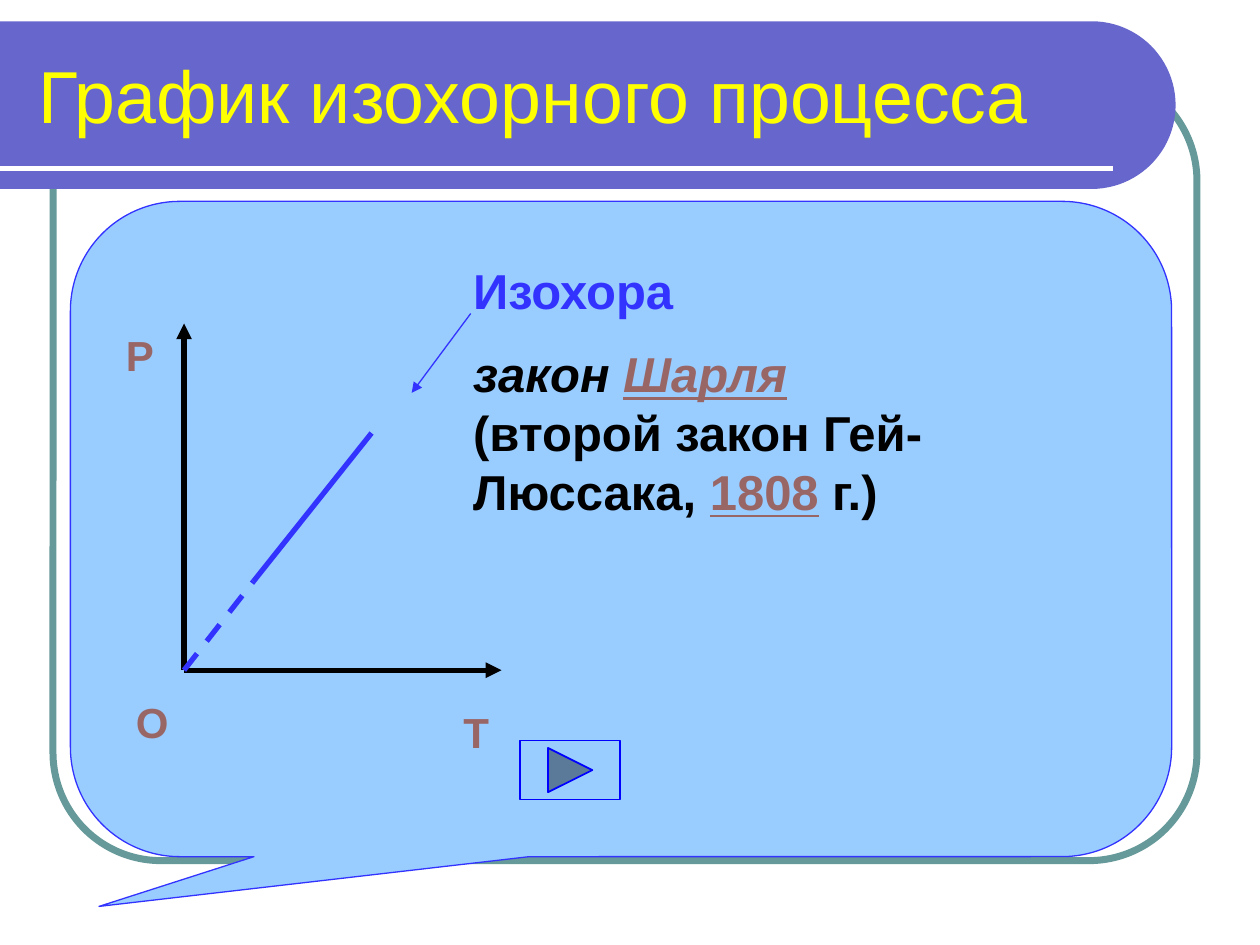
import math

import pptx
import pptx.dml.color
import pptx.enum.dml
import pptx.enum.shapes
import pptx.enum.text
import pptx.oxml
import pptx.oxml.ns
import pptx.util

Cm = pptx.util.Cm
Pt = pptx.util.Pt
SHAPES = pptx.enum.shapes.MSO_SHAPE

COLORS = {
    "banner": "6666CC", "frame": "669999", "white": "FFFFFF", "title": "FFFF00",
    "callout": "99CCFF", "isochore": "3333FF", "axis": "000000",
    "accent": "996666", "button": "0000FF",
}
LABEL = {"size": Pt(24), "bold": True}
LAW = {"size": Pt(28), "bold": True}


def rgb(name):
    return pptx.dml.color.RGBColor.from_string(COLORS[name])


def style_shape(shape, fill=None, line=None, width=0.75):
    shape.shadow.inherit = False
    if fill:
        shape.fill.solid()
        shape.fill.fore_color.rgb = rgb(fill)
    else:
        shape.fill.background()
    if line:
        shape.line.color.rgb = rgb(line)
        shape.line.width = Pt(width)
    else:
        shape.line.fill.background()


def add_preset(slide, preset, box, adjustments=(), **style):
    shape = slide.shapes.add_shape(preset, *map(Cm, box))
    for index, value in enumerate(adjustments):
        shape.adjustments[index] = value
    style_shape(shape, **style)
    return shape


def add_line(slide, start, end, color, width=3, arrow=False, dashed=False):
    connector = slide.shapes.add_connector(
        pptx.enum.shapes.MSO_CONNECTOR.STRAIGHT, *map(Cm, start + end))
    connector.line.color.rgb = rgb(color)
    connector.line.width = Pt(width)
    if dashed:
        connector.line.dash_style = pptx.enum.dml.MSO_LINE.DASH
    if arrow:
        line = connector.line._get_or_add_ln()
        tail = pptx.oxml.parse_xml(
            f'<a:tailEnd {pptx.oxml.ns.nsdecls("a")} type="triangle"/>')
        line.append(tail)
    connector._element.spPr.append(
        pptx.oxml.parse_xml(f'<a:effectLst {pptx.oxml.ns.nsdecls("a")}/>'))


def add_text(slide, box, paragraphs, base, space_before=0, anchor="TOP"):
    """Each paragraph is a list of (text, color, extra font values)."""
    frame = slide.shapes.add_textbox(*map(Cm, box)).text_frame
    frame.word_wrap = True
    frame.vertical_anchor = pptx.enum.text.MSO_ANCHOR[anchor]
    for index, runs in enumerate(paragraphs):
        paragraph = frame.add_paragraph() if index else frame.paragraphs[0]
        paragraph.space_before = Pt(space_before)
        for text, color, extra in runs:
            run = paragraph.add_run()
            run.text = text
            run.font.color.rgb = rgb(color)
            for name, value in {"name": "Arial", **base, **extra}.items():
                setattr(run.font, name, value)


def add_banner(slide, box):
    """Band with a half-round right end, an underline and the title."""
    left, top, width, height = box
    radius = height / 2
    center_x, center_y = left + width - radius, top + radius
    steps = 48
    arc = [(center_x + radius * math.sin(math.pi * step / steps),
            center_y - radius * math.cos(math.pi * step / steps))
           for step in range(steps + 1)]
    outline = [(Cm(x), Cm(y)) for x, y in arc + [(left, top + height)]]
    builder = slide.shapes.build_freeform(Cm(left), Cm(top))
    builder.add_line_segments(outline, close=True)
    style_shape(builder.convert_to_shape(), fill="banner")

    underline_y = top + 2.96
    add_line(slide, (left, underline_y), (left + 22.43, underline_y), "white")
    add_text(slide, (left + 0.53, top + 0.2, 22.28, 2.54),
             [[("График изохорного процесса", "title", {})]],
             {"size": Pt(42)}, anchor="MIDDLE")


def add_graph(slide, box):
    """P-T axes with the isochore, dashed near the origin."""
    left, top, width, height = box
    origin = (left, top + height)
    bend = (left + 1.4, top + 5.2)
    add_line(slide, origin, (left, top), "axis", arrow=True)
    add_line(slide, origin, (left + width, top + height), "axis", arrow=True)
    for letter, x, y, label_width in (
            ("P", -1.42, 0, 0.99), ("O", -1.22, 7.39, 0.99), ("T", 5.38, 7.59, 1.4)):
        add_text(slide, (left + x, top + y, label_width, 1.27),
                 [[(letter, "accent", {})]], LABEL, space_before=12)
    add_line(slide, origin, bend, "isochore", dashed=True)
    add_line(slide, bend, (left + 3.78, top + 2.21), "isochore")


def add_law(slide, box):
    """Name of the curve, its law and a thin arrow towards the curve."""
    left, top = box[:2]
    add_text(slide, box, [
        [("Изохора", "isochore", {})],
        [("закон ", "axis", {"italic": True}),
         ("Шарля", "accent", {"italic": True, "underline": True}),
         (" (второй закон Гей-Люссака, ", "axis", {}),
         ("1808", "accent", {"underline": True}),
         ("\N{NO-BREAK SPACE}г.)", "axis", {})],
    ], LAW, space_before=14)
    add_line(slide, (left + 0.2, top + 1.19), (left - 0.99, top + 2.79),
             "isochore", width=0.75, arrow=True)


def add_content(slide, box):
    left, top, width, height = box
    add_preset(slide, SHAPES.ROUNDED_RECTANGULAR_CALLOUT, box,
               (-0.474, 0.576, 0.167), fill="callout", line="isochore")
    add_graph(slide, (left + 2.29, top + 2.46, 6.4, 6.99))
    add_law(slide, (left + 7.87, top + 1.07, 10.8, 5.59))
    add_preset(slide, SHAPES.ACTION_BUTTON_FORWARD_OR_NEXT,
               (left + 9.07, top + 10.87, 2.01, 1.19),
               fill="callout", line="button", width=1)


def main():
    presentation = pptx.Presentation()
    presentation.slide_width, presentation.slide_height = Cm(25.4), Cm(19.05)
    slide = presentation.slides.add_slide(presentation.slide_layouts[6])
    add_preset(slide, SHAPES.ROUNDED_RECTANGLE, (1.07, 1.47, 23.06, 15.88),
               (0.137,), line="frame", width=4)
    add_banner(slide, (0, 0.43, 23.7, 3.38))
    add_content(slide, (1.42, 4.06, 22.2, 13.21))
    presentation.save("out.pptx")


if __name__ == "__main__":
    main()
